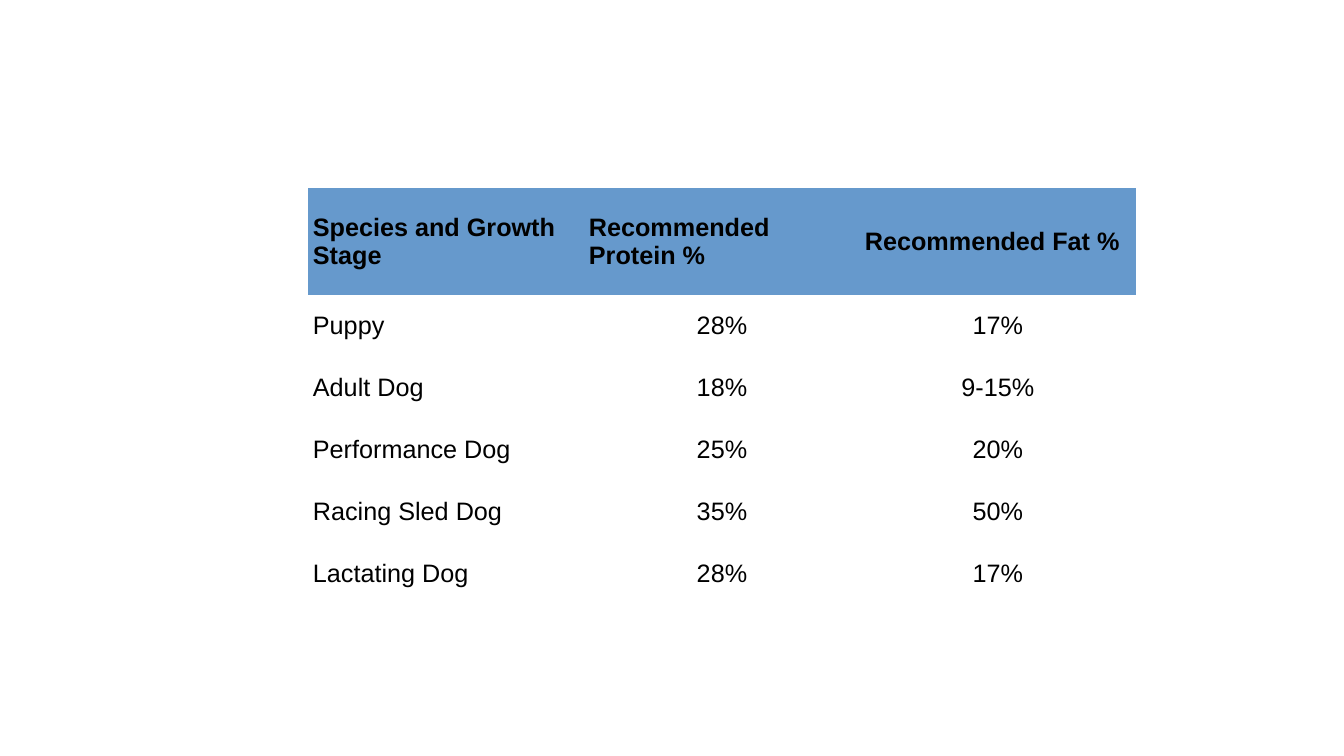
import pptx
import pptx.dml.color
import pptx.enum.text
import pptx.oxml.ns
import pptx.util

PX = 914400 / 100.8
THEME = {
    "font": "Arial",
    "size": 18,
    "text": "000000",
    "header": "6699CC",
    "body": "FFFFFF",
    "table_style": "{2D5ABB26-0587-4C30-8999-92F81FD0307C}",
}


def px(length):
    return pptx.util.Emu(round(length * PX))


def color(name):
    return pptx.dml.color.RGBColor.from_string(THEME[name])


presentation = pptx.Presentation()
presentation.slide_width = px(1344)
presentation.slide_height = px(756)
slide = presentation.slides.add_slide(presentation.slide_layouts[6])

nutrition_rows = [
    ("Species and Growth Stage", "Recommended Protein %", "Recommended Fat %"),
    ("Puppy", "28%", "17%"),
    ("Adult Dog", "18%", "9-15%"),
    ("Performance Dog", "25%", "20%"),
    ("Racing Sled Dog", "35%", "50%"),
    ("Lactating Dog", "28%", "17%"),
]
column_width = 276
header_height = 107
body_height = 62
cell_margin = px(5)
column_count = len(nutrition_rows[0])
table_height = header_height + body_height * (len(nutrition_rows) - 1)

table_frame = slide.shapes.add_table(
    len(nutrition_rows), column_count,
    px(308), px(188), px(column_width * column_count), px(table_height),
)
for style_id in table_frame.element.iter(pptx.oxml.ns.qn("a:tableStyleId")):
    style_id.text = THEME["table_style"]
table = table_frame.table
table.horz_banding = False

for column in table.columns:
    column.width = px(column_width)

for row_index, row_texts in enumerate(nutrition_rows):
    is_header = row_index == 0
    table.rows[row_index].height = px(header_height if is_header else body_height)
    for column_index, text in enumerate(row_texts):
        cell = table.cell(row_index, column_index)
        cell.fill.solid()
        cell.fill.fore_color.rgb = color("header" if is_header else "body")
        cell.vertical_anchor = pptx.enum.text.MSO_ANCHOR.MIDDLE
        cell.margin_left = cell.margin_right = cell_margin
        cell.margin_top = cell.margin_bottom = cell_margin
        paragraph = cell.text_frame.paragraphs[0]
        if not is_header and column_index > 0:
            paragraph.alignment = pptx.enum.text.PP_ALIGN.CENTER
        run = paragraph.add_run()
        run.text = text
        run.font.name = THEME["font"]
        run.font.size = pptx.util.Pt(THEME["size"])
        run.font.bold = is_header
        run.font.color.rgb = color("text")

presentation.save("out.pptx")
